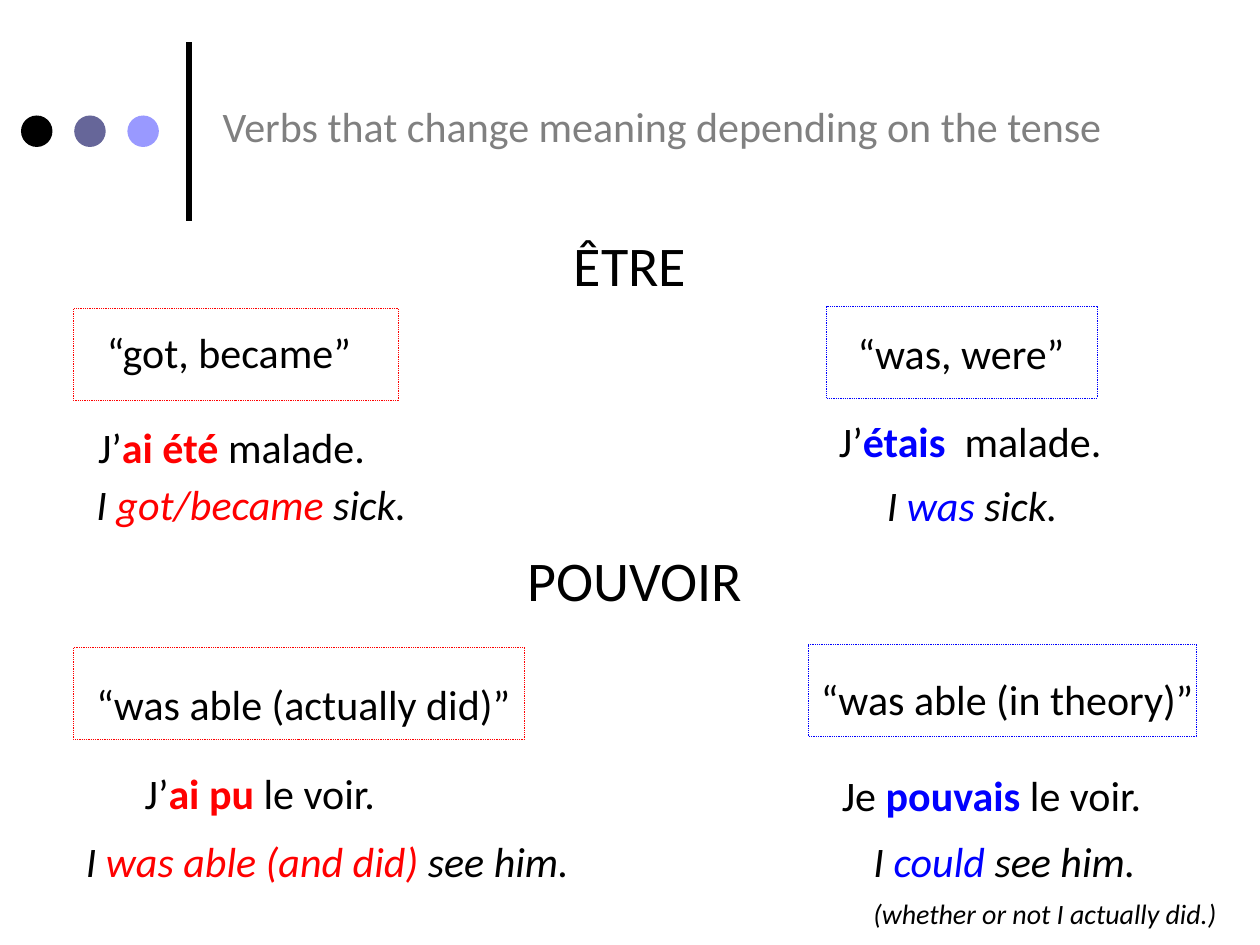
"""Build a slide on French verbs whose meaning changes with the tense."""
from dataclasses import dataclass

from lxml import etree
from pptx import Presentation
from pptx.dml.color import RGBColor
from pptx.enum.dml import MSO_LINE
from pptx.enum.shapes import MSO_CONNECTOR, MSO_SHAPE
from pptx.enum.text import MSO_ANCHOR, MSO_AUTO_SIZE, PP_ALIGN
from pptx.oxml.ns import qn
from pptx.util import Pt

LEFT, CENTER = PP_ALIGN.LEFT, PP_ALIGN.CENTER
MIDDLE, TOP = MSO_ANCHOR.MIDDLE, MSO_ANCHOR.TOP
NO_AUTOFIT = MSO_AUTO_SIZE.NONE
DOTTED = MSO_LINE.ROUND_DOT
OVAL, RECTANGLE = MSO_SHAPE.OVAL, MSO_SHAPE.RECTANGLE
STRAIGHT = MSO_CONNECTOR.STRAIGHT

COLORS = {
    "text": "000000",
    "title": "808080",
    "passé composé": "FF0000",
    "imparfait": "0000FF",
    "first dot": "000000",
    "second dot": "666699",
    "third dot": "9999FF",
}
FORMATS = {
    "title": {"size": Pt(24), "bold": False},
    "verb": {"size": Pt(32)},
    "plain": {"size": Pt(24)},
    "strong": {"size": Pt(24), "bold": True},
    "english": {"size": Pt(24), "italic": True},
    "note": {"size": Pt(16), "italic": True},
}
FRENCH = ("plain", "strong", "plain")
ENGLISH = ("english", "english", "english")


@dataclass
class Area:
    left: float
    top: float
    width: float
    height: float = 36

    def lengths(self) -> tuple:
        return Pt(self.left), Pt(self.top), Pt(self.width), Pt(self.height)


@dataclass
class Verb:
    infinitive: str
    area: Area


@dataclass
class Meaning:
    gloss: str
    tense: str
    area: Area
    frame: Area


@dataclass
class Sentence:
    before: str
    verb: str
    after: str
    tense: str
    styles: tuple
    area: Area
    note: str = ""


VERBS = [
    Verb("ÊTRE", Area(108, 108.7, 504, 65.5)),
    Verb("POUVOIR", Area(258, 288.7, 210, 65.5)),
]
MEANINGS = [
    Meaning("“got, became”", "passé composé", Area(54, 183, 180), Area(42, 176.5, 186, 52.5)),
    Meaning("“was, were”", "imparfait", Area(483, 183.6, 144), Area(472.5, 175, 154.5, 52.5)),
    Meaning("“was able (actually did)”", "passé composé", Area(48, 384, 264), Area(42, 370, 258, 52.5)),
    Meaning("“was able (in theory)”", "imparfait", Area(462, 381.6, 234), Area(462, 368.5, 222, 52.5)),
]
SENTENCES = [
    Sentence("J’", "ai été ", "malade.", "passé composé", FRENCH, Area(49, 237.6, 213)),
    Sentence("I ", "got/became ", "sick.", "passé composé", ENGLISH, Area(48, 270, 234)),
    Sentence("J’", "étais  ", "malade.", "imparfait", FRENCH, Area(472.3, 234, 186)),
    Sentence("I ", "was ", "sick.", "imparfait", ENGLISH, Area(499.7, 270.7, 126)),
    Sentence("J’", "ai pu ", "le voir.", "passé composé", FRENCH, Area(75.6, 435, 232)),
    Sentence("I ", "was able (and did) ", "see him.", "passé composé", ENGLISH, Area(42, 474, 324)),
    Sentence("Je ", "pouvais", " le voir.", "imparfait", FRENCH, Area(474, 436.3, 246)),
    Sentence("I ", "could ", "see him.", "imparfait", ENGLISH, Area(492, 474, 228, 62),
             "(whether or not I actually did.)"),
]


def color(name: str) -> RGBColor:
    return RGBColor.from_string(COLORS[name])


def add_run(paragraph, text: str, style: str, color_name: str = "text") -> None:
    run = paragraph.add_run()
    run.text = text
    run.font.name = "Calibri"
    run.font.color.rgb = color(color_name)
    for attribute, value in FORMATS[style].items():
        setattr(run.font, attribute, value)


def add_text_frame(slide, area: Area):
    frame = slide.shapes.add_textbox(*area.lengths()).text_frame
    settings = {"word_wrap": True, "auto_size": NO_AUTOFIT, "vertical_anchor": TOP}
    for attribute, value in settings.items():
        setattr(frame, attribute, value)
    frame.paragraphs[0].space_before = Pt(6)
    return frame


def add_shape(slide, kind, area: Area):
    shape = slide.shapes.add_shape(kind, *area.lengths())
    shape.shadow.inherit = False
    return shape


def draw_title(slide, text: str) -> None:
    title = slide.shapes.title
    title.left, title.top, title.width, title.height = Area(120, 54, 576).lengths()
    title.text_frame.auto_size = NO_AUTOFIT
    title.text_frame.vertical_anchor = MIDDLE
    paragraph = title.text_frame.paragraphs[0]
    paragraph.alignment = LEFT
    add_run(paragraph, text, "title", "title")


def draw_ornament(slide) -> None:
    bar = slide.shapes.add_connector(STRAIGHT, Pt(108), Pt(126), Pt(108), Pt(24))
    bar.line.color.rgb = color("text")
    bar.line.width = Pt(3)
    etree.SubElement(bar._element.spPr, qn("a:effectLst"))
    for index, name in enumerate(("first dot", "second dot", "third dot")):
        dot = add_shape(slide, OVAL, Area(12 + 30.4 * index, 66, 18, 18))
        dot.fill.solid()
        dot.fill.fore_color.rgb = color(name)
        dot.line.fill.background()


def draw_verb(slide, verb: Verb) -> None:
    paragraph = add_text_frame(slide, verb.area).paragraphs[0]
    paragraph.alignment = CENTER
    paragraph.line_spacing = 1.5
    add_run(paragraph, verb.infinitive, "verb")


def draw_meaning(slide, meaning: Meaning) -> None:
    gloss = add_text_frame(slide, meaning.area).paragraphs[0]
    add_run(gloss, meaning.gloss, "plain")
    frame = add_shape(slide, RECTANGLE, meaning.frame)
    frame.fill.background()
    frame.line.color.rgb = color(meaning.tense)
    frame.line.width = Pt(0.5)
    frame.line.dash_style = DOTTED


def draw_sentence(slide, sentence: Sentence) -> None:
    text_frame = add_text_frame(slide, sentence.area)
    parts = (sentence.before, sentence.verb, sentence.after)
    color_names = ("text", sentence.tense, "text")
    for part, style, color_name in zip(parts, sentence.styles, color_names):
        add_run(text_frame.paragraphs[0], part, style, color_name)
    if sentence.note:
        note = text_frame.add_paragraph()
        note.space_before = Pt(6)
        add_run(note, sentence.note, "note")


def main() -> None:
    presentation = Presentation()
    presentation.slide_width, presentation.slide_height = Pt(720), Pt(540)
    slide = presentation.slides.add_slide(presentation.slide_layouts[5])
    draw_ornament(slide)
    draw_title(slide, "Verbs that change meaning depending on the tense")
    for verb in VERBS:
        draw_verb(slide, verb)
    for sentence in SENTENCES:
        draw_sentence(slide, sentence)
    for meaning in MEANINGS:
        draw_meaning(slide, meaning)
    presentation.save("out.pptx")


if __name__ == "__main__":
    main()
